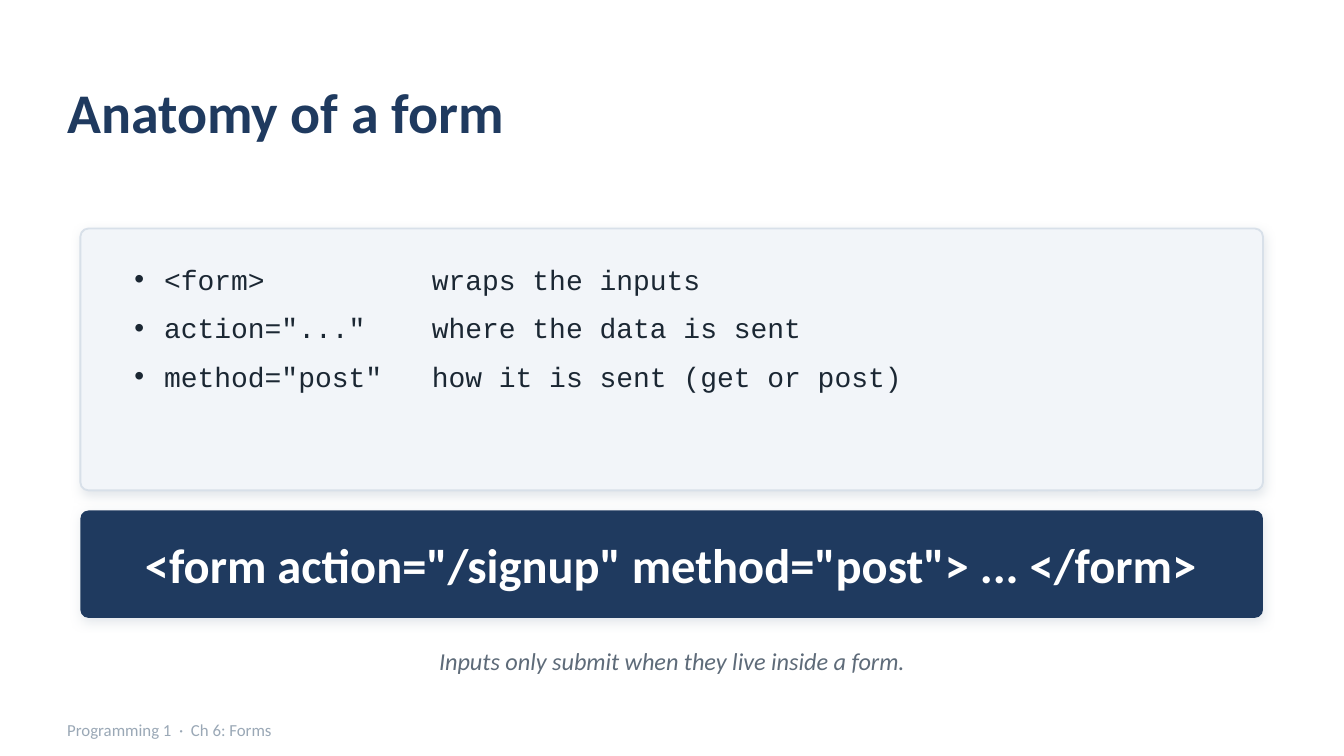
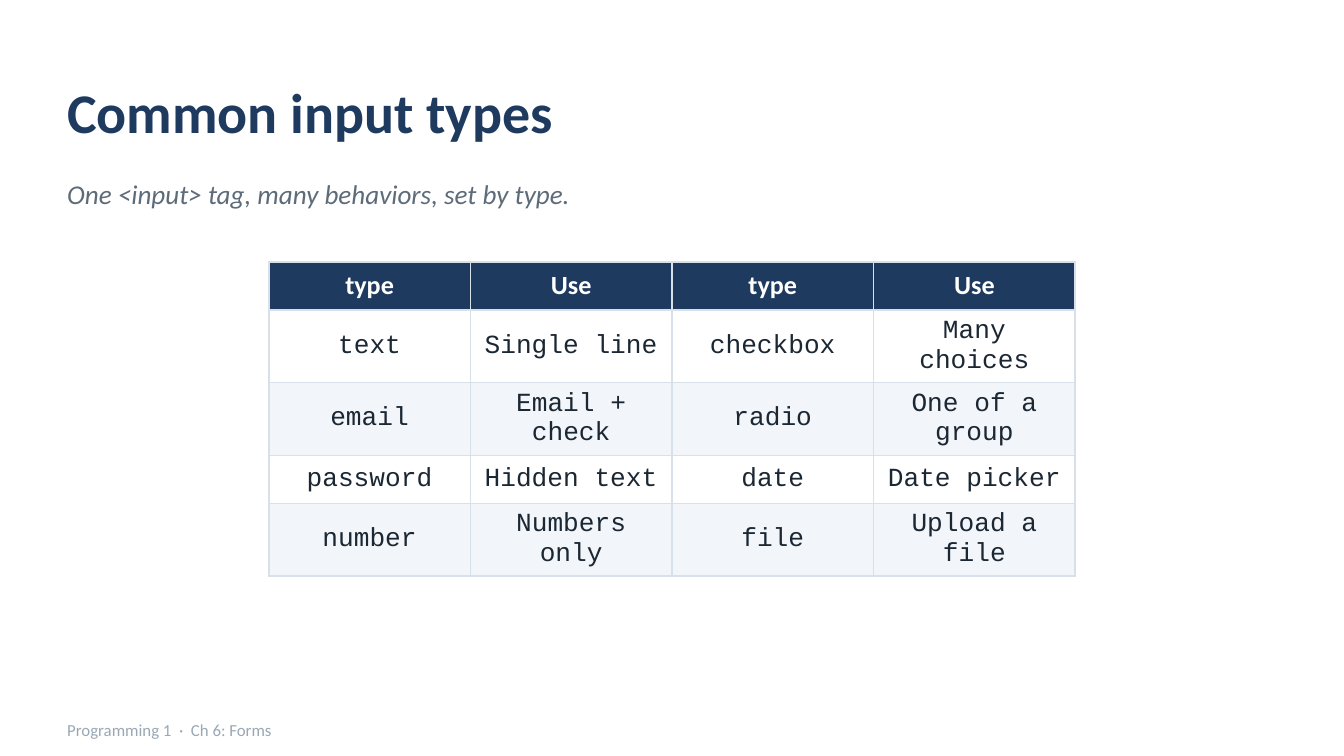
from lxml import etree
from pptx import Presentation
from pptx.dml.color import RGBColor
from pptx.enum.shapes import MSO_SHAPE
from pptx.enum.text import MSO_ANCHOR, MSO_AUTO_SIZE, PP_ALIGN
from pptx.oxml.ns import qn
from pptx.util import Cm, Pt

ROUNDED = MSO_SHAPE.ROUNDED_RECTANGLE
MIDDLE, TOP = MSO_ANCHOR.MIDDLE, MSO_ANCHOR.TOP
LEFT, CENTER = PP_ALIGN.LEFT, PP_ALIGN.CENTER
NO_AUTOFIT = MSO_AUTO_SIZE.NONE

NAVY, PALE, BORDER, WHITE = "1F3A5F", "F2F5F9", "D8E0E9", "FFFFFF"
INK, GREY, LIGHT_GREY = "1B2733", "5E6B79", "9AA8B6"
SANS, MONO = "Calibri", "Courier New"

TITLE_AND_CONTENT, TITLE_ONLY = 1, 5
MARGIN = 1.27
PANEL_LEFT, PANEL_WIDTH = 1.52, 22.35
BULLET_INDENT, MEANING_TAB = 0.56, 5.62
FOOTER = "Programming 1  ·  Ch 6: Forms"

FORM_PARTS = [
    ("<form>", "wraps the inputs"),
    ('action="..."', "where the data is sent"),
    ('method="post"', "how it is sent (get or post)"),
]
INPUT_TYPES = [
    ("type", "Use", "type", "Use"),
    ("text", "Single line", "checkbox", "Many choices"),
    ("email", "Email + check", "radio", "One of a group"),
    ("password", "Hidden text", "date", "Date picker"),
    ("number", "Numbers only", "file", "Upload a file"),
]


def color(value):
    return RGBColor.from_string(value)


def add_xml(parent, tag, **attributes):
    return etree.SubElement(parent, qn(tag), {key: str(value) for key, value in attributes.items()})


def add_run(paragraph, text, size, tint, font=SANS, bold=False, italic=False):
    run = paragraph.add_run()
    run.text = text
    run.font.name = font
    run.font.size = Pt(size)
    run.font.bold = bold
    run.font.italic = italic
    run.font.color.rgb = color(tint)


def place(shape, left, top, width, height):
    shape.left, shape.top = Cm(left), Cm(top)
    shape.width, shape.height = Cm(width), Cm(height)


def set_frame(shape, anchor=MIDDLE, inset_x=0, inset_y=0):
    frame = shape.text_frame
    frame.word_wrap = True
    frame.auto_size = NO_AUTOFIT
    frame.vertical_anchor = anchor
    frame.margin_left = frame.margin_right = Cm(inset_x)
    frame.margin_top = frame.margin_bottom = Cm(inset_y)
    return frame


def write_line(shape, text, size, tint, align=LEFT, **style):
    paragraph = set_frame(shape).paragraphs[0]
    paragraph.alignment = align
    add_run(paragraph, text, size, tint, **style)


def add_text(slide, box, text, size, tint, align=LEFT, **style):
    shape = slide.shapes.add_textbox(*map(Cm, box))
    write_line(shape, text, size, tint, align, **style)


def add_panel(slide, top, height, fill, corner, line=None):
    shape = slide.shapes.add_shape(ROUNDED, Cm(PANEL_LEFT), Cm(top), Cm(PANEL_WIDTH), Cm(height))
    shape.adjustments[0] = corner
    shape.fill.solid()
    shape.fill.fore_color.rgb = color(fill)
    if line:
        shape.line.color.rgb = color(line)
        shape.line.width = Pt(1)
    else:
        shape.line.fill.background()
    add_shadow(shape)
    return shape


def add_shadow(shape):
    shape.shadow.inherit = False
    effects = shape._element.spPr.find(qn("a:effectLst"))
    shadow = add_xml(effects, "a:outerShdw", blurRad=Pt(6), dist=Pt(2), dir=90 * 60000,
                     algn="bl", rotWithShape=0)
    tint = add_xml(shadow, "a:srgbClr", val=LIGHT_GREY)
    add_xml(tint, "a:alpha", val=28000)


def fill_definitions(slide, box, definitions):
    body = slide.placeholders[1]
    place(body, *box)
    slide.shapes._spTree.append(body._element)
    frame = set_frame(body, TOP, 0.25, 0.13)
    for index, (term, meaning) in enumerate(definitions):
        paragraph = frame.add_paragraph() if index else frame.paragraphs[0]
        paragraph.alignment = LEFT
        paragraph.space_before = Pt(0)
        paragraph.space_after = Pt(8)
        properties = paragraph._p.get_or_add_pPr()
        properties.set("marL", str(Cm(BULLET_INDENT)))
        properties.set("indent", str(-Cm(BULLET_INDENT)))
        add_xml(properties, "a:buChar", char="•")
        tabs = add_xml(properties, "a:tabLst")
        add_xml(tabs, "a:tab", pos=Cm(MEANING_TAB), algn="l")
        add_run(paragraph, f"{term}\t{meaning}", 15, INK, MONO)


def set_borders(cell):
    properties = cell._tc.get_or_add_tcPr()
    for index, side in enumerate(("a:lnL", "a:lnR", "a:lnT", "a:lnB")):
        line = add_xml(properties, side, w=Pt(1))
        add_xml(add_xml(line, "a:solidFill"), "a:srgbClr", val=BORDER)
        properties.insert(index, line)


def add_grid(slide, left, top, column_width, row_height, rows):
    column_count = len(rows[0])
    table = slide.shapes.add_table(len(rows), column_count, Cm(left), Cm(top),
                                   Cm(column_width * column_count),
                                   Cm(row_height * len(rows))).table
    table.horz_banding = False
    for row_index, row in enumerate(rows):
        header = row_index == 0
        fill = NAVY if header else (PALE if row_index % 2 == 0 else WHITE)
        for column_index, text in enumerate(row):
            cell = table.cell(row_index, column_index)
            cell.fill.solid()
            cell.fill.fore_color.rgb = color(fill)
            cell.vertical_anchor = MIDDLE
            set_borders(cell)
            paragraph = cell.text_frame.paragraphs[0]
            paragraph.alignment = CENTER
            add_run(paragraph, text, 14, WHITE if header else INK,
                    SANS if header else MONO, bold=header)


def add_slide(presentation, layout, title):
    slide = presentation.slides.add_slide(presentation.slide_layouts[layout])
    slide.background.fill.solid()
    slide.background.fill.fore_color.rgb = color(WHITE)
    place(slide.shapes.title, MARGIN, 1.02, 22.86, 2.16)
    write_line(slide.shapes.title, title, 30, NAVY, bold=True)
    add_text(slide, (MARGIN, 13.46, 20.32, 0.66), FOOTER, 9, LIGHT_GREY)
    return slide


def build_form_anatomy(presentation):
    slide = add_slide(presentation, TITLE_AND_CONTENT, "Anatomy of a form")
    add_panel(slide, 4.32, 4.95, PALE, 0.031, BORDER)
    fill_definitions(slide, (2.29, 4.83, 20.83, 4.06), FORM_PARTS)
    banner = add_panel(slide, 9.65, 2.03, NAVY, 0.075)
    write_line(banner, '<form action="/signup" method="post"> ... </form>', 26, WHITE,
               CENTER, bold=True)
    add_text(slide, (PANEL_LEFT, 11.99, PANEL_WIDTH, 1.02),
             "Inputs only submit when they live inside a form.", 13, GREY, CENTER, italic=True)


def build_input_types(presentation):
    slide = add_slide(presentation, TITLE_ONLY, "Common input types")
    add_text(slide, (MARGIN, 3.15, 22.86, 1.02),
             "One <input> tag, many behaviors, set by type.", 14.5, GREY, italic=True)
    add_grid(slide, 5.08, 4.95, 3.81, 0.91, INPUT_TYPES)


def main():
    presentation = Presentation()
    presentation.slide_width, presentation.slide_height = Cm(25.4), Cm(14.29)
    build_form_anatomy(presentation)
    build_input_types(presentation)
    presentation.save("out.pptx")


if __name__ == "__main__":
    main()
